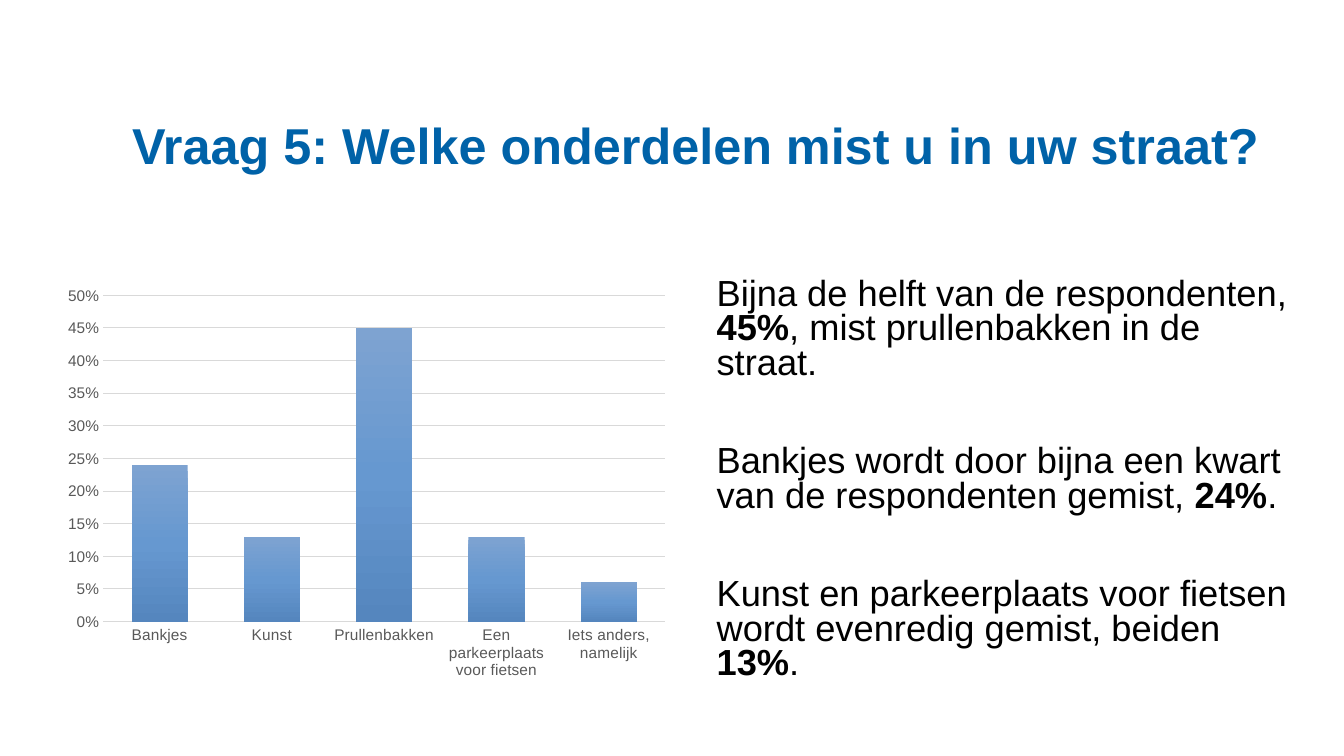
from dataclasses import dataclass

from pptx import Presentation
from pptx.chart.data import CategoryChartData
from pptx.dml.color import RGBColor
from pptx.enum.chart import XL_CHART_TYPE as ChartType, XL_TICK_MARK as Tick
from pptx.oxml import parse_xml
from pptx.oxml.ns import nsdecls
from pptx.util import Cm, Pt

FONT = "Arial"
BLUE = RGBColor(0x00, 0x62, 0xA8)
BLACK = RGBColor(0x00, 0x00, 0x00)
GREY = RGBColor(0x59, 0x59, 0x59)
LIGHT_GREY = RGBColor(0xD9, 0xD9, 0xD9)
BAR_STOPS = {
    0: RGBColor(0x7E, 0xA3, 0xD1),
    50: RGBColor(0x66, 0x98, 0xD0),
    100: RGBColor(0x55, 0x86, 0xBE),
}


@dataclass
class Area:
    left: float
    top: float
    width: float
    height: float

    def lengths(self) -> tuple[Cm, Cm, Cm, Cm]:
        return Cm(self.left), Cm(self.top), Cm(self.width), Cm(self.height)


@dataclass
class TextRun:
    text: str
    bold: bool = False


@dataclass
class TextBlock:
    area: Area
    paragraphs: list[list[TextRun]]
    size: float
    color: RGBColor
    line_spacing: float
    gap: float = 0


CONTENT_TOP, CONTENT_HEIGHT = 7.01, 10.31
CHART_AREA = Area(1.4, CONTENT_TOP, 15.67, CONTENT_HEIGHT)

TITLE = TextBlock(
    Area(3.33, 3.05, 29.21, 3.38),
    [[TextRun("Vraag 5: Welke onderdelen mist u in uw straat?", True)]],
    36, BLUE, 0.9,
)
FINDINGS = TextBlock(
    Area(18.06, CONTENT_TOP, 14.48, CONTENT_HEIGHT),
    [
        [TextRun("Bijna de helft van de respondenten, "), TextRun("45%", True),
         TextRun(", mist prullenbakken in de straat.")],
        [TextRun("Bankjes wordt door bijna een kwart van de respondenten gemist, "),
         TextRun("24%", True), TextRun(".")],
        [TextRun("Kunst en parkeerplaats voor fietsen wordt evenredig gemist, beiden "),
         TextRun("13%", True), TextRun(".")],
    ],
    25.9, BLACK, 0.8, gap=45,
)
SHARES = {
    "Bankjes": 0.24,
    "Kunst": 0.13,
    "Prullenbakken": 0.45,
    "Een parkeerplaats voor fietsen": 0.13,
    "Iets anders, namelijk": 0.06,
}


def style_font(font, size: float, color: RGBColor, bold: bool = False) -> None:
    font.name = FONT
    font.size = Pt(size)
    font.bold = bold
    font.color.rgb = color


def add_text(slide, block: TextBlock) -> None:
    tf = slide.shapes.add_textbox(*block.area.lengths()).text_frame
    tf.word_wrap = True
    tf.margin_left = tf.margin_top = tf.margin_right = tf.margin_bottom = 0
    for i, runs in enumerate(block.paragraphs):
        p = tf.add_paragraph() if i else tf.paragraphs[0]
        p.line_spacing = block.line_spacing
        if i:
            p.space_before = Pt(block.gap)
        for run in runs:
            r = p.add_run()
            r.text = run.text
            style_font(r.font, block.size, block.color, run.bold)


def fill_gradient(series, stops: dict[int, RGBColor]) -> None:
    """Fill the bars from top to bottom."""
    stop_xml = "".join(
        f'<a:gs pos="{pos * 1000}"><a:srgbClr val="{color}"/></a:gs>'
        for pos, color in stops.items()
    )
    series.format.line.fill.background()
    series.format.fill.background()
    sp_pr = series.format.fill._xPr
    solid = sp_pr.find("{http://schemas.openxmlformats.org/drawingml/2006/main}noFill")
    sp_pr.replace(solid, parse_xml(
        f'<a:gradFill {nsdecls("a")} rotWithShape="1"><a:gsLst>{stop_xml}</a:gsLst>'
        '<a:lin ang="5400000" scaled="0"/></a:gradFill>'
    ))


def add_share_chart(slide, area: Area, shares: dict[str, float]) -> None:
    data = CategoryChartData(number_format="0%")
    data.categories = list(shares)
    data.add_series("Series 1", list(shares.values()))
    chart = slide.shapes.add_chart(
        ChartType.COLUMN_CLUSTERED, *area.lengths(), data
    ).chart
    chart.has_legend = False
    chart.has_title = False
    style_font(chart.font, 11, BLACK)

    # Bars
    plot = chart.plots[0]
    plot.gap_width = 100
    plot.overlap = -24
    plot.vary_by_categories = False
    fill_gradient(plot.series[0], BAR_STOPS)

    # Axes
    for axis in (chart.category_axis, chart.value_axis):
        axis.major_tick_mark = axis.minor_tick_mark = Tick.NONE
        style_font(axis.tick_labels.font, 11, GREY)
    category_line = chart.category_axis.format.line
    category_line.color.rgb = LIGHT_GREY
    category_line.width = Pt(1)
    values = chart.value_axis
    values.minimum_scale, values.maximum_scale, values.major_unit = 0, 0.5, 0.05
    values.tick_labels.number_format = "0%"
    values.tick_labels.number_format_is_linked = False
    values.format.line.fill.background()
    values.has_major_gridlines = True
    grid_line = values.major_gridlines.format.line
    grid_line.color.rgb = LIGHT_GREY
    grid_line.width = Pt(0.75)


def main() -> None:
    prs = Presentation()
    prs.slide_width, prs.slide_height = Cm(33.87), Cm(19.05)
    slide = prs.slides.add_slide(prs.slide_layouts[6])
    add_text(slide, FINDINGS)
    add_text(slide, TITLE)
    add_share_chart(slide, CHART_AREA, SHARES)
    prs.save("out.pptx")


if __name__ == "__main__":
    main()
